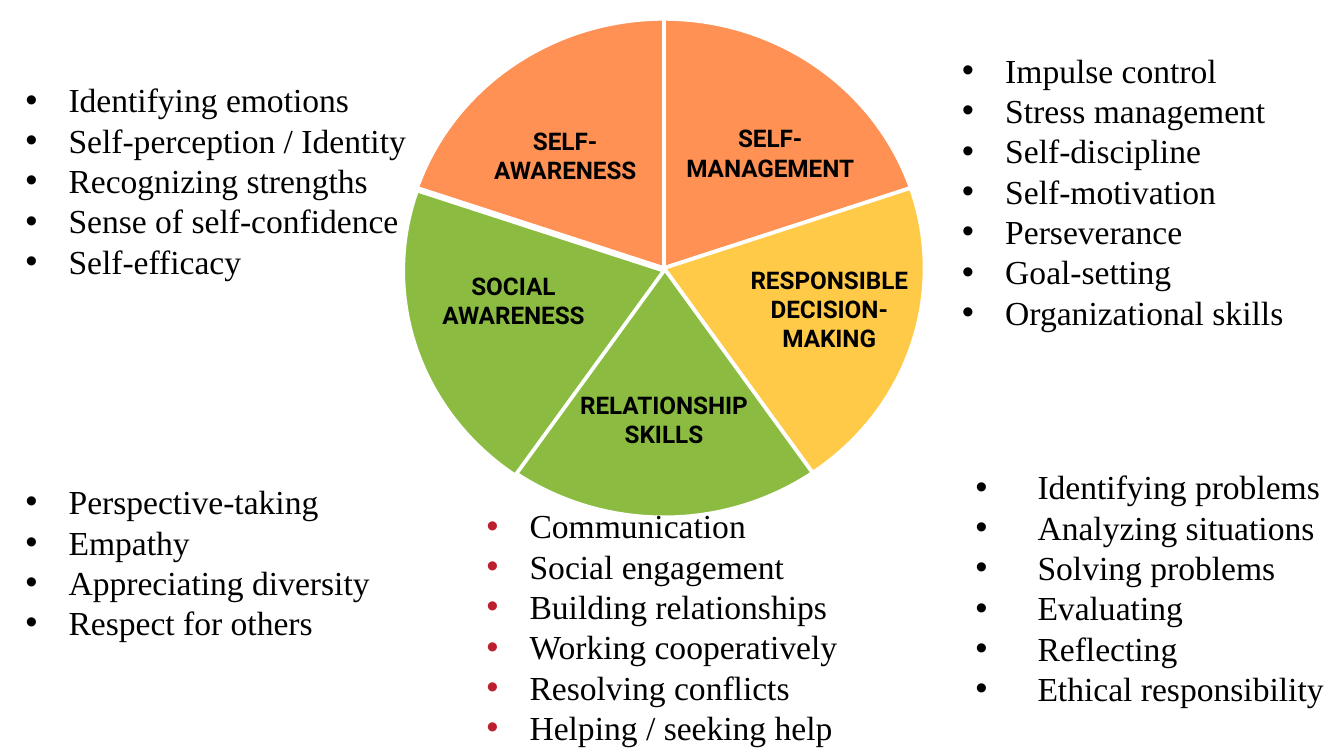
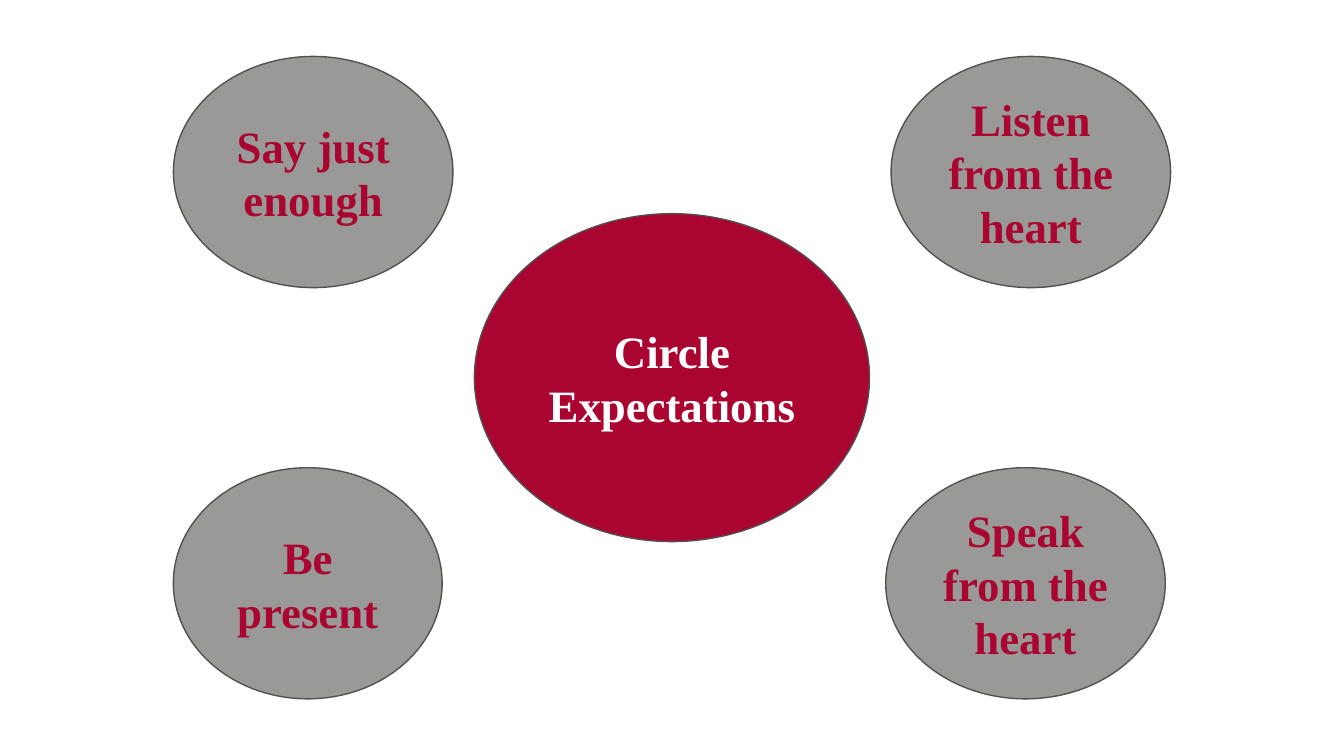
from lxml import etree
from pptx import Presentation
from pptx.dml.color import RGBColor
from pptx.enum.shapes import MSO_SHAPE
from pptx.enum.text import MSO_ANCHOR, PP_ALIGN
from pptx.oxml.ns import qn
from pptx.util import Inches, Pt

PIE, OVAL = MSO_SHAPE.PIE, MSO_SHAPE.OVAL
TOP, MIDDLE = MSO_ANCHOR.TOP, MSO_ANCHOR.MIDDLE
LEFT, CENTER = PP_ALIGN.LEFT, PP_ALIGN.CENTER

SERIF, SANS = "Times New Roman", "Roboto"
BLACK, WHITE = "000000", "FFFFFF"
ORANGE, YELLOW, GREEN = "FF7930", "FFCA48", "8BBC41"
CRIMSON, BULLET_RED = "AA0530", "BC2030"
GRAY, OUTLINE = "999A98", "505150"

# Wheel sectors, clockwise from the top: fill, opacity in percent, top
WHEEL_LEFT, WHEEL_WIDTH, WHEEL_HEIGHT = 3, 3.88, 3.71
SECTORS = [
    (ORANGE, 82, 0.14),
    (YELLOW, 100, 0.14),
    (GREEN, 100, 0.14),
    (GREEN, 100, 0.16),
    (ORANGE, 82, 0.14),
]
SECTOR_LABELS = [
    ((3.49, 0.92, 1.43, 0.49), ["SELF-", "AWARENESS"]),
    ((4.94, 0.9, 1.58, 0.49), ["SELF-", "MANAGEMENT"]),
    ((3.03, 2, 1.58, 0.49), ["SOCIAL AWARENESS"]),
    ((4.15, 2.88, 1.58, 0.49), ["RELATIONSHIP SKILLS"]),
    ((5.38, 1.95, 1.58, 0.71), ["RESPONSIBLE DECISION-", "MAKING"]),
]

# Skill lists: box, bullet colour, (left margin, first-line indent), items
INDENT, WIDE_INDENT = (0.32, -0.33), (0.56, -0.46)
SKILL_LISTS = [
    ((0.14, 0.57, 3.26, 1.58), BLACK, INDENT, [
        "Identifying emotions", "Self-perception / Identity",
        "Recognizing strengths", "Sense of self-confidence", "Self-efficacy"]),
    ((0.14, 3.56, 2.91, 1.58), BLACK, INDENT, [
        "Perspective-taking", "Empathy", "Appreciating diversity",
        "Respect for others"]),
    ((3.57, 3.74, 3.28, 1.56), BULLET_RED, INDENT, [
        "Communication", "Social engagement", "Building relationships",
        "Working cooperatively", "Resolving conflicts",
        "Helping / seeking help"]),
    ((7.11, 3.45, 3.12, 1.78), BLACK, WIDE_INDENT, [
        "Identifying problems", "Analyzing situations", "Solving problems",
        "Evaluating", "Reflecting", "Ethical responsibility"]),
    ((7.11, 0.35, 3.16, 1.82), BLACK, INDENT, [
        "Impulse control", "Stress management", "Self-discipline",
        "Self-motivation", "Perseverance", "Goal-setting",
        "Organizational skills"]),
]

EXPECTATIONS = [
    ((3.53, 1.59, 2.94, 2.44), CRIMSON, WHITE, "Circle Expectations"),
    ((1.29, 0.42, 2.08, 1.72), GRAY, CRIMSON, "Say just enough"),
    ((6.63, 0.42, 2.08, 1.72), GRAY, CRIMSON, "Listen from the heart"),
    ((1.29, 3.48, 2, 1.72), GRAY, CRIMSON, "Be present"),
    ((6.59, 3.48, 2.08, 1.72), GRAY, CRIMSON, "Speak from the heart"),
]


def color(value):
    return RGBColor.from_string(value)


def inches(box):
    return [Inches(length) for length in box]


def add_filled_shape(slide, kind, box, fill, line, line_width):
    shape = slide.shapes.add_shape(kind, *inches(box))
    shape.shadow.inherit = False
    shape.fill.solid()
    shape.fill.fore_color.rgb = color(fill)
    shape.line.color.rgb = color(line)
    shape.line.width = Pt(line_width)
    return shape


def set_opacity(shape, percent):
    fill_color = shape.fill._xPr.find(qn("a:solidFill"))[0]
    etree.SubElement(fill_color, qn("a:alpha"), val=str(percent * 1000))


def add_bullet(paragraph, bullet_color, indent):
    properties = paragraph._p.get_or_add_pPr()
    margin, first_line = inches(indent)
    properties.set("marL", str(margin))
    properties.set("indent", str(first_line))
    holder = etree.SubElement(properties, qn("a:buClr"))
    etree.SubElement(holder, qn("a:srgbClr"), val=bullet_color)
    etree.SubElement(properties, qn("a:buFont"), typeface="Arial")
    etree.SubElement(properties, qn("a:buChar"), char="•")


def write_text(shape, lines, font, size, text_color, bold=False, align=LEFT,
               anchor=TOP, insets=(0.05, 0.02), bullet=None):
    """Fill a shape with one paragraph per line; bullet is (colour, indent)."""
    frame = shape.text_frame
    frame.word_wrap = True
    frame.vertical_anchor = anchor
    frame.margin_left = frame.margin_right = Inches(insets[0])
    frame.margin_top = frame.margin_bottom = Inches(insets[1])
    frame.text = "\n".join(lines)
    for paragraph in frame.paragraphs:
        paragraph.alignment = align
        if bullet:
            add_bullet(paragraph, *bullet)
        paragraph.font.name = font
        paragraph.font.size = Pt(size)
        paragraph.font.bold = bold
        paragraph.font.color.rgb = color(text_color)


def build_skills_wheel(slide):
    sweep = 360 / len(SECTORS)
    for index, (fill, opacity, top) in enumerate(SECTORS):
        box = (WHEEL_LEFT, top, WHEEL_WIDTH, WHEEL_HEIGHT)
        sector = add_filled_shape(slide, PIE, box, fill, WHITE, 2)
        for side in (0, 1):
            angle = (270 + (index + side) * sweep) % 360
            sector.adjustments[side] = angle * 0.6  # 60000ths of a degree / 100000
        if opacity < 100:
            set_opacity(sector, opacity)
    for box, lines in SECTOR_LABELS:
        label = slide.shapes.add_textbox(*inches(box))
        write_text(label, lines, SANS, 13, BLACK, bold=True, align=CENTER)
    for box, bullet_color, indent, items in SKILL_LISTS:
        skills = slide.shapes.add_textbox(*inches(box))
        write_text(skills, items, SERIF, 18, BLACK, bullet=(bullet_color, indent))


def build_expectations(slide):
    for box, fill, text_color, text in EXPECTATIONS:
        oval = add_filled_shape(slide, OVAL, box, fill, OUTLINE, 0.75)
        write_text(oval, [text], SERIF, 24, text_color, bold=True, align=CENTER,
                   anchor=MIDDLE, insets=(0.1, 0.1))


def main():
    presentation = Presentation()
    presentation.slide_width = Inches(10)
    presentation.slide_height = Inches(10) * 9 // 16
    blank = presentation.slide_layouts[6]
    for build in (build_skills_wheel, build_expectations):
        slide = presentation.slides.add_slide(blank)
        slide.background.fill.solid()
        slide.background.fill.fore_color.rgb = color(WHITE)
        build(slide)
    presentation.save("out.pptx")


if __name__ == "__main__":
    main()
